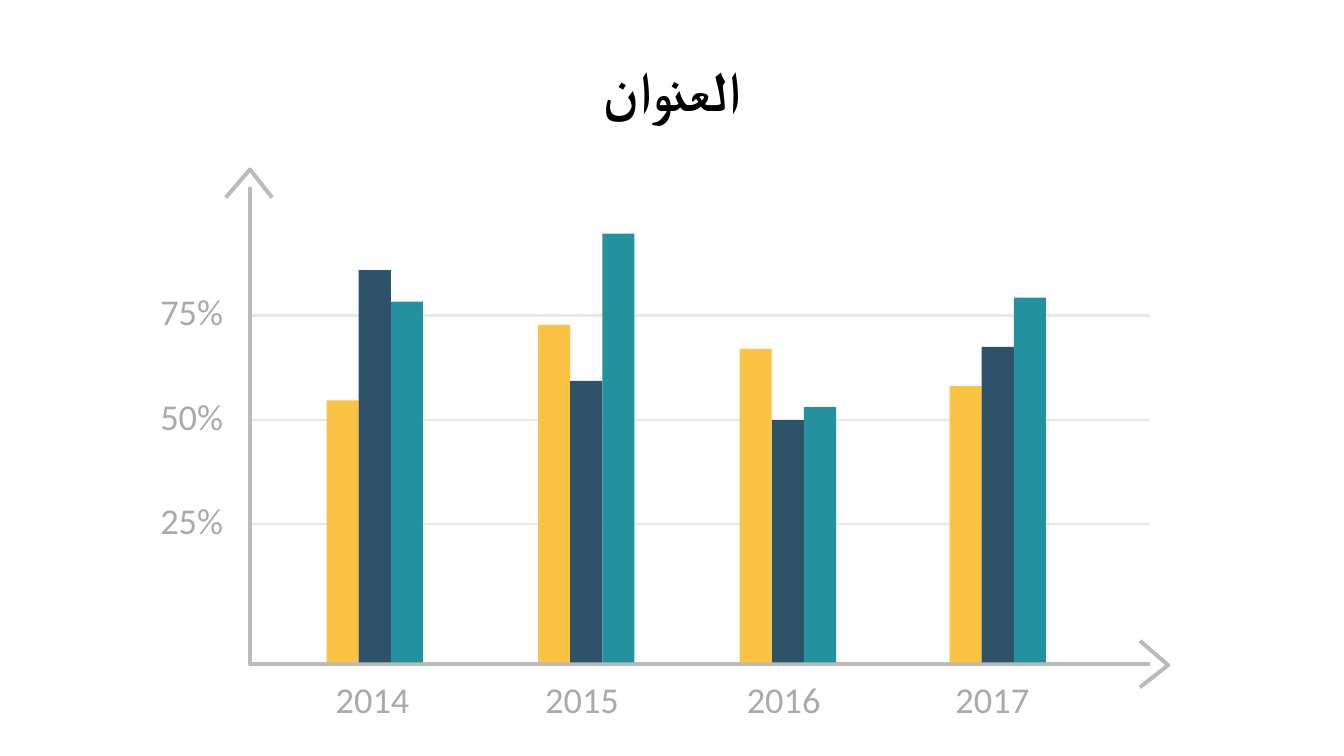
from dataclasses import dataclass

from lxml import etree
from pptx import Presentation
from pptx.dml.color import RGBColor
from pptx.enum.shapes import MSO_CONNECTOR, MSO_SHAPE
from pptx.enum.text import MSO_ANCHOR, PP_ALIGN
from pptx.oxml.ns import qn
from pptx.slide import Slide
from pptx.util import Cm, Pt

STRAIGHT = MSO_CONNECTOR.STRAIGHT
RECTANGLE = MSO_SHAPE.RECTANGLE
TOP = MSO_ANCHOR.TOP
LEFT = PP_ALIGN.LEFT
CENTER = PP_ALIGN.CENTER


@dataclass(frozen=True)
class Theme:
    series: tuple[str, ...] = ("FAC344", "2F526B", "23929E")
    grid: str = "E8E8E8"
    axis: str = "BABABA"
    label: str = "A9ABAA"
    title: str = "000000"
    label_font: str = "Calibri"
    title_font: str = "Montserrat"
    label_size: float = 26
    title_size: float = 40
    grid_width: float = 1.62
    axis_width: float = 2.87


@dataclass(frozen=True)
class YearCluster:
    year: str
    left: float
    label_left: float
    heights: tuple[float, float, float]


@dataclass(frozen=True)
class Label:
    text: str
    left: float
    top: float
    width: float
    height: float
    font: str
    size: float
    color: str
    bold: bool = False
    align: PP_ALIGN = LEFT


THEME = Theme()

PLOT_LEFT, PLOT_RIGHT = 6.3, 28.98
AXIS_TOP, AXIS_BOTTOM = 4.72, 16.74
BAR_BASE, BAR_WIDTH = 16.69, 0.81
FIRST_GRID_TOP, GRID_STEP = 13.21, 2.63
PERCENT_LEFT, PERCENT_RISE = 4.04, 0.66
YEAR_TOP = 17.07
LABEL_WIDTH, LABEL_HEIGHT = 2.3, 1.12

PERCENTS = ("25%", "50%", "75%")

CLUSTERS = (
    YearCluster("2014", 8.23, 8.46, (6.6, 9.88, 9.09)),
    YearCluster("2015", 13.56, 13.74, (8.5, 7.09, 10.8)),
    YearCluster("2016", 18.64, 18.82, (7.9, 6.1, 6.43)),
    YearCluster("2017", 23.93, 24.08, (6.96, 7.95, 9.19)),
)

AXIS_OUTLINES = (
    ((PLOT_LEFT, AXIS_TOP), (PLOT_LEFT, AXIS_BOTTOM), (PLOT_RIGHT, AXIS_BOTTOM)),
    ((5.69, 4.98), (PLOT_LEFT, 4.27), (6.86, 4.98)),
    ((28.73, 16.15), (29.44, 16.76), (28.73, 17.32)),
)


def add_grid_line(page: Slide, top: float) -> None:
    line = page.shapes.add_connector(
        STRAIGHT, Cm(PLOT_LEFT), Cm(top), Cm(PLOT_RIGHT), Cm(top)
    )
    line.line.color.rgb = RGBColor.from_string(THEME.grid)
    line.line.width = Pt(THEME.grid_width)
    etree.SubElement(line.element.spPr, qn("a:effectLst"))


def add_axis_outline(page: Slide, points: tuple[tuple[float, float], ...]) -> None:
    start, *rest = [(Cm(x), Cm(y)) for x, y in points]
    builder = page.shapes.build_freeform(*start)
    builder.add_line_segments(rest, close=False)
    outline = builder.convert_to_shape()
    outline.shadow.inherit = False
    outline.fill.background()
    outline.line.color.rgb = RGBColor.from_string(THEME.axis)
    outline.line.width = Pt(THEME.axis_width)


def add_cluster(page: Slide, cluster: YearCluster) -> None:
    group = page.shapes.add_group_shape()
    for index, (height, color) in enumerate(zip(cluster.heights, THEME.series)):
        bar = group.shapes.add_shape(
            RECTANGLE,
            Cm(cluster.left + index * BAR_WIDTH),
            Cm(BAR_BASE - height),
            Cm(BAR_WIDTH),
            Cm(height),
        )
        bar.shadow.inherit = False
        bar.fill.solid()
        bar.fill.fore_color.rgb = RGBColor.from_string(color)
        bar.line.fill.background()


def add_label(page: Slide, label: Label) -> None:
    box = page.shapes.add_textbox(
        Cm(label.left), Cm(label.top), Cm(label.width), Cm(label.height)
    )
    frame = box.text_frame
    frame.word_wrap = True
    frame.vertical_anchor = TOP
    frame.margin_left = frame.margin_right = 0
    frame.margin_top = frame.margin_bottom = 0
    para = frame.paragraphs[0]
    para.text = label.text
    para.alignment = label.align
    para.font.name = label.font
    para.font.size = Pt(label.size)
    para.font.bold = label.bold
    para.font.color.rgb = RGBColor.from_string(label.color)


def add_axis_label(page: Slide, text: str, left: float, top: float) -> None:
    add_label(page, Label(
        text, left, top, LABEL_WIDTH, LABEL_HEIGHT,
        THEME.label_font, THEME.label_size, THEME.label,
    ))


def main() -> None:
    deck = Presentation()
    deck.slide_width, deck.slide_height = Cm(33.87), Cm(19.05)
    page = deck.slides.add_slide(deck.slide_layouts[6])

    grid_tops = [FIRST_GRID_TOP - index * GRID_STEP for index in range(len(PERCENTS))]
    for top in grid_tops:
        add_grid_line(page, top)
    for points in AXIS_OUTLINES:
        add_axis_outline(page, points)
    for cluster in CLUSTERS:
        add_axis_label(page, cluster.year, cluster.label_left, YEAR_TOP)
    for percent, top in zip(PERCENTS, grid_tops):
        add_axis_label(page, percent, PERCENT_LEFT, top - PERCENT_RISE)
    for cluster in CLUSTERS:
        add_cluster(page, cluster)
    add_label(page, Label(
        "العنوان", 7.34, 1.4, 19.2, 1.7,
        THEME.title_font, THEME.title_size, THEME.title, bold=True, align=CENTER,
    ))

    deck.save("out.pptx")


if __name__ == "__main__":
    main()
